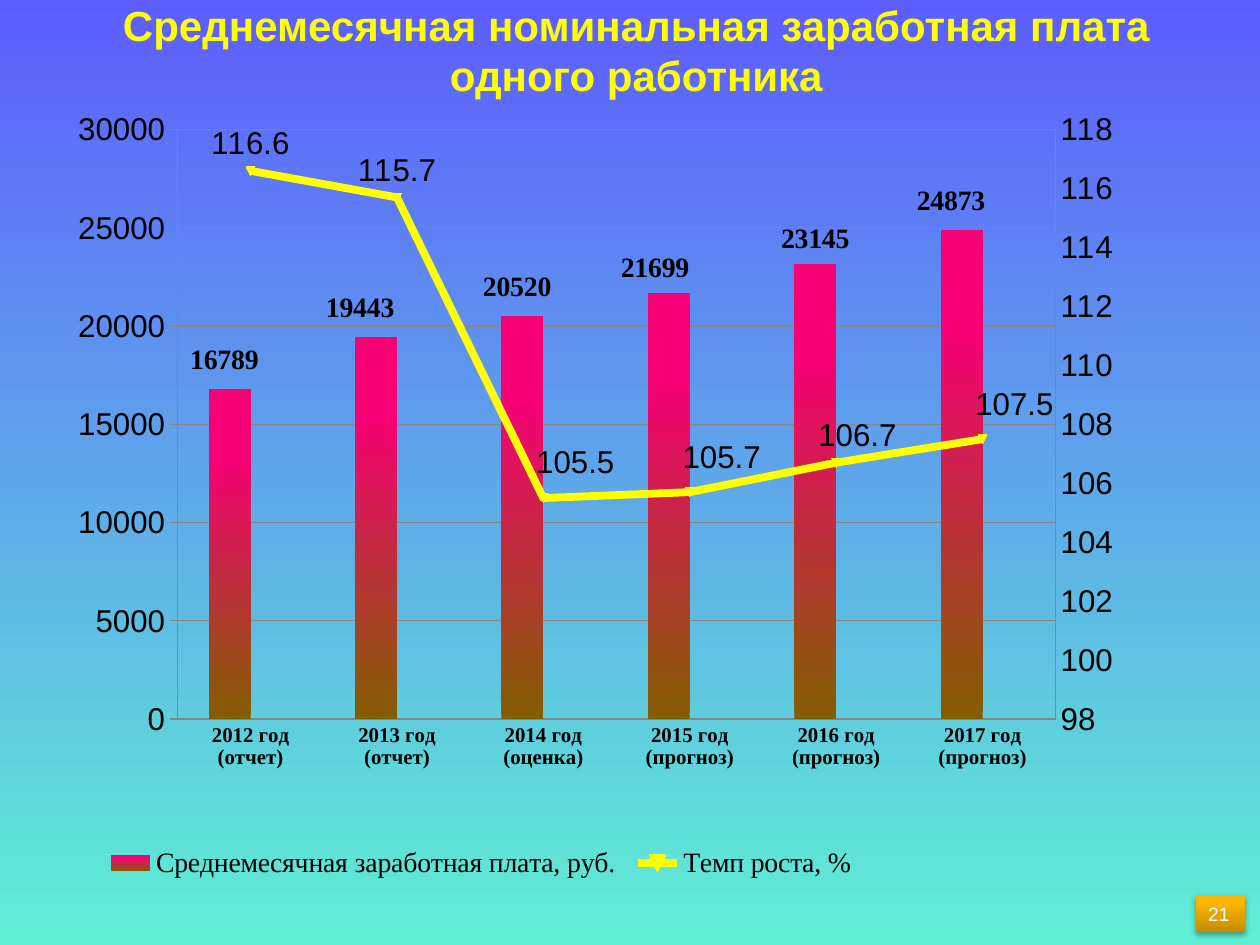
from lxml.etree import SubElement
from pptx import Presentation
from pptx.chart.axis import ValueAxis
from pptx.chart.data import CategoryChartData
from pptx.dml.color import RGBColor
from pptx.enum.chart import (XL_CHART_TYPE, XL_LABEL_POSITION, XL_LEGEND_POSITION,
                             XL_MARKER_STYLE, XL_TICK_MARK)
from pptx.enum.shapes import MSO_SHAPE
from pptx.enum.text import MSO_ANCHOR, PP_ALIGN
from pptx.oxml import parse_xml
from pptx.oxml.ns import nsdecls, qn
from pptx.util import Inches, Pt

SANS, SERIF = "Arial", "Times New Roman"
BLACK, YELLOW, WHITE, GRID = "000000", "FFFF00", "FFFFFF", "868686"

YEARS = ["2012 год (отчет)", "2013 год (отчет)", "2014 год (оценка)",
         "2015 год (прогноз)", "2016 год (прогноз)", "2017 год (прогноз)"]
WAGES = [16789, 19443, 20520, 21699, 23145, 24873]
GROWTH = [116.6, 115.7, 105.5, 105.7, 106.7, 107.5]

# Label shifts from the default place, as shares of the chart
WAGE_SHIFTS = [(-0.005, -0.01), (-0.015, -0.01), (-0.005, -0.01),
               (-0.013, -0.005), (0, -0.005), (-0.01, -0.01)]
GROWTH_SHIFTS = [(0, 0), (0, 0), (0.03, -0.01), (0.03, -0.01), (0.02, 0), (0.03, -0.01)]


def rgb(color):
    return RGBColor.from_string(color)


def set_font(font, size, name=SANS, color=BLACK, bold=False):
    font.size, font.name, font.bold = Pt(size), name, bold
    font.color.rgb = rgb(color)


def write(tf, text, align=PP_ALIGN.LEFT, **style):
    p = tf.paragraphs[0]
    p.alignment = align
    r = p.add_run()
    r.text = text
    set_font(r.font, **style)


def gradient(fill, owner, stops, angle):
    fill.gradient()
    grad = next(owner.iter(qn("a:gradFill")))
    stop_list = grad.find(qn("a:gsLst"))
    for old in list(stop_list):
        stop_list.remove(old)
    for pos, color in stops:
        gs = SubElement(stop_list, qn("a:gs"), pos=str(pos * 1000))
        SubElement(gs, qn("a:srgbClr"), val=color)
    grad.find(qn("a:lin")).set("ang", str(angle * 60000))


def layout_xml(inner=False, **shares):
    """Manual chart layout; without w and h it is a shift from the default place."""
    target = '<c:layoutTarget val="inner"/>' if inner else ""
    modes = '<c:xMode val="edge"/><c:yMode val="edge"/>' if "w" in shares else ""
    sizes = "".join(f'<c:{key} val="{val}"/>' for key, val in shares.items())
    return parse_xml(f'<c:layout {nsdecls("c")}><c:manualLayout>{target}{modes}{sizes}'
                     '</c:manualLayout></c:layout>')


def set_layout(element, before, **shares):
    for old in element.findall(qn("c:layout")):
        element.remove(old)
    element.find(qn(before)).addprevious(layout_xml(**shares))


def label_points(series, shifts, position, **style):
    for i, (x, y) in enumerate(shifts):
        label = series.points[i].data_label
        set_font(label.font, **style)
        label.position = position
        if x or y:
            label_element = series._element.find(qn("c:dLbls")).findall(qn("c:dLbl"))[i]
            label_element.find(qn("c:idx")).addnext(layout_xml(x=x, y=y))


def move_to_line(chart, series):
    """Turn a column series into a line on a second value axis, which is returned."""
    ser = series._element
    for tag in ("c:invertIfNegative",):
        for old in ser.findall(qn(tag)):
            ser.remove(old)
    plot_area = chart._chartSpace.chart.plotArea
    line = parse_xml(f'<c:lineChart {nsdecls("c")}><c:grouping val="standard"/>'
                     '<c:varyColors val="0"/><c:marker val="1"/>'
                     '<c:axId val="501"/><c:axId val="502"/></c:lineChart>')
    line.find(qn("c:marker")).addprevious(ser)
    plot_area.find(qn("c:barChart")).addnext(line)

    def axis(tag, own, cross, deleted, side, tail):
        return parse_xml(
            f'<c:{tag} {nsdecls("c")}><c:axId val="{own}"/><c:scaling>'
            f'<c:orientation val="minMax"/></c:scaling><c:delete val="{deleted}"/>'
            f'<c:axPos val="{side}"/><c:majorTickMark val="cross"/><c:minorTickMark val="none"/>'
            f'<c:tickLblPos val="nextTo"/><c:crossAx val="{cross}"/>{tail}</c:{tag}>')

    category = axis("catAx", 501, 502, 1, "b", '<c:crosses val="autoZero"/>')
    value = axis("valAx", 502, 501, 0, "r", '<c:crosses val="max"/>')
    plot_area.findall(qn("c:valAx"))[-1].addnext(category)
    category.addnext(value)
    return ValueAxis(value)


class Deck:
    def __init__(self, width=10, height=7.5):
        self.prs = Presentation()
        self.prs.slide_width, self.prs.slide_height = Inches(width), Inches(height)

    def box(self, x, y, w, h):
        """Shares of the slide's size to lengths."""
        width, height = self.prs.slide_width, self.prs.slide_height
        return int(x * width), int(y * height), int(w * width), int(h * height)

    def slide(self, stops):
        self.s = self.prs.slides.add_slide(self.prs.slide_layouts[5])
        gradient(self.s.background.fill, self.s._element, stops, 90)

    def title(self, text, *share):
        sp = self.s.shapes.title
        sp.left, sp.top, sp.width, sp.height = self.box(*share)
        tf = sp.text_frame
        tf.word_wrap, tf.vertical_anchor = True, MSO_ANCHOR.MIDDLE
        write(tf, text, PP_ALIGN.CENTER, size=24, color=YELLOW, bold=True)

    def badge(self, text, stops, *share):
        sp = self.s.shapes.add_shape(MSO_SHAPE.RECTANGLE, *self.box(*share))
        sp.shadow.inherit = False
        gradient(sp.fill, sp._element.spPr, stops, 270)
        sp.line.fill.background()
        effects = sp._element.spPr.find(qn("a:effectLst"))
        effects.append(parse_xml(
            f'<a:outerShdw {nsdecls("a")} blurRad="{Pt(3.1)}" dist="{Pt(1.8)}" dir="5400000">'
            '<a:srgbClr val="000000"><a:alpha val="35000"/></a:srgbClr></a:outerShdw>'))
        tf = sp.text_frame
        tf.word_wrap, tf.vertical_anchor = False, MSO_ANCHOR.MIDDLE
        write(tf, text, size=11, color=WHITE)

    def wage_chart(self, *share):
        data = CategoryChartData()
        data.categories = YEARS
        data.add_series("Среднемесячная заработная плата, руб.", WAGES)
        data.add_series("Series 2", [None] * len(YEARS))
        data.add_series("Темп роста, %", GROWTH)
        chart = self.s.shapes.add_chart(
            XL_CHART_TYPE.COLUMN_CLUSTERED, *self.box(*share), data).chart
        chart.has_title = False
        set_font(chart.font, 18)
        right = move_to_line(chart, chart.plots[0].series[2])
        columns, lines = chart.plots
        columns.gap_width, columns.overlap, columns.vary_by_categories = 150, 0, False
        self.style_axes(chart, right)
        self.style_legend(chart)
        plot_area = chart._chartSpace.chart.plotArea
        set_layout(plot_area, "c:barChart", inner=True, x=0.085, y=0.038, w=0.825, h=0.713)

        wages, spacer = columns.series
        gradient(wages.format.fill, wages._element,
                 [(0, "835E01"), (80, "F70075"), (100, "F80076")], 270)
        gradient(spacer.format.fill, spacer._element,
                 [(0, "5DAD1B"), (80, "79E023"), (100, "79E520")], 270)
        label_points(wages, WAGE_SHIFTS, XL_LABEL_POSITION.OUTSIDE_END,
                     size=16, name=SERIF, bold=True)

        growth = lines.series[0]
        growth.smooth = False
        growth.format.line.color.rgb = rgb(YELLOW)
        growth.format.line.width = Pt(4.5)
        growth.marker.style, growth.marker.size = XL_MARKER_STYLE.AUTOMATIC, 5
        growth.marker.format.fill.solid()
        growth.marker.format.fill.fore_color.rgb = rgb(YELLOW)
        label_points(growth, GROWTH_SHIFTS, XL_LABEL_POSITION.ABOVE, size=18)

    def style_axes(self, chart, right):
        left, bottom = chart.value_axis, chart.category_axis
        for axis, size, name in ((bottom, 12, SERIF), (left, 16, SERIF), (right, 18, SANS)):
            set_font(axis.tick_labels.font, size, name, bold=name == SERIF)
            axis.format.line.color.rgb = rgb(GRID)
        for axis in (left, bottom):
            axis.major_tick_mark = XL_TICK_MARK.NONE
        for axis, low, high, step in ((left, 0, 30000, 5000), (right, 98, 118, 2)):
            axis.minimum_scale, axis.maximum_scale, axis.major_unit = low, high, step
        left.major_gridlines.format.line.color.rgb = rgb(GRID)

    def style_legend(self, chart):
        chart.has_legend = True
        legend = chart.legend
        legend.position, legend.include_in_layout = XL_LEGEND_POSITION.BOTTOM, False
        set_font(legend.font, 16, SERIF)
        legend._element.find(qn("c:legendPos")).addnext(parse_xml(
            f'<c:legendEntry {nsdecls("c")}><c:idx val="1"/><c:delete val="1"/></c:legendEntry>'))
        set_layout(legend._element, "c:overlay", x=0.01, y=0.9, w=0.72, h=0.05)


def main():
    deck = Deck()
    deck.slide([(0, "5D5DFF"), (100, "5FEFD4")])
    deck.title("Среднемесячная номинальная заработная плата одного работника",
               0.055, 0.02, 0.9, 0.065)
    deck.wage_chart(0.062, 0.104, 0.852, 0.875)
    deck.badge("21", [(0, "C58C00"), (80, "FFB601"), (100, "FFB602")],
               0.949, 0.947, 0.039, 0.039)
    deck.prs.save("out.pptx")


if __name__ == "__main__":
    main()
